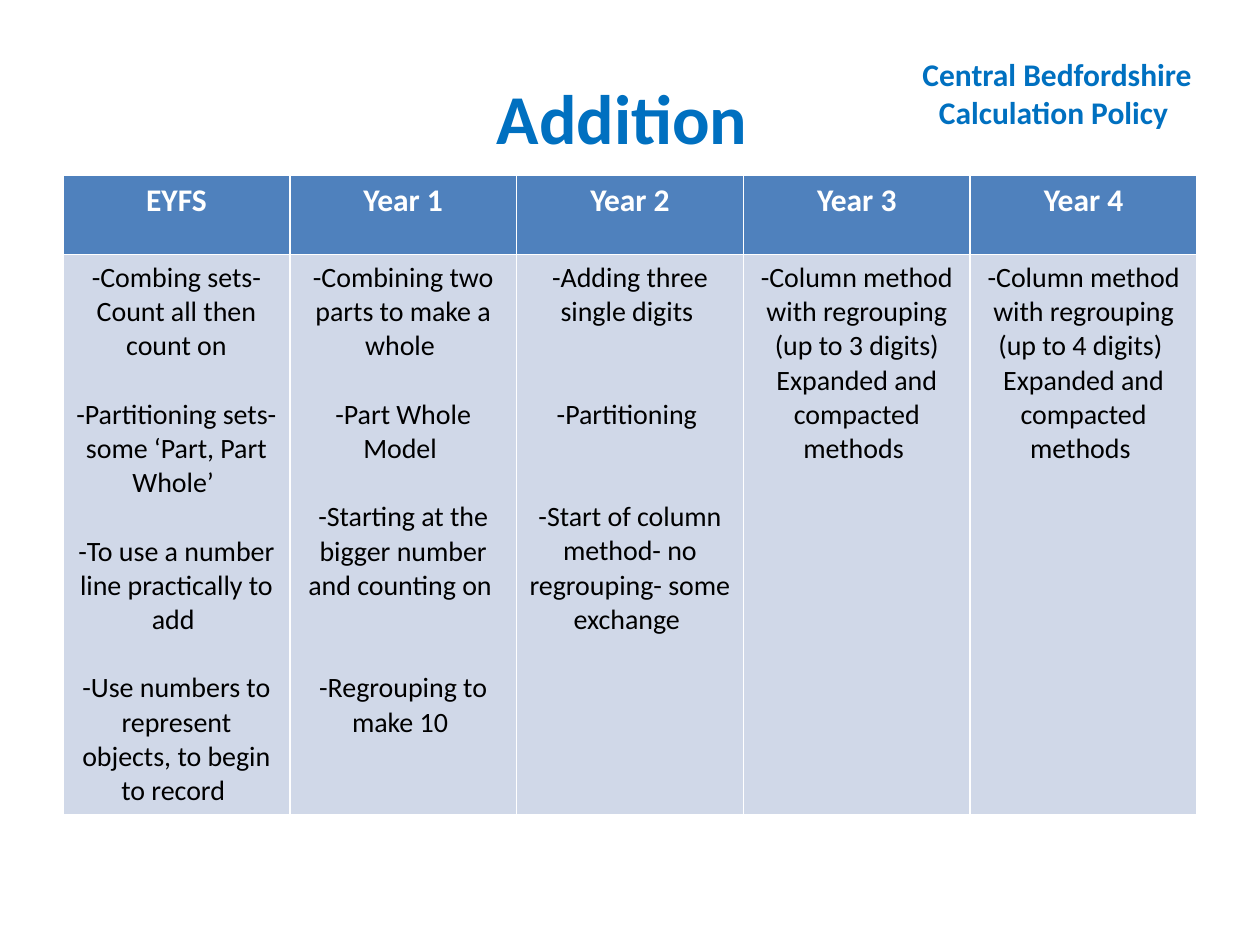
from dataclasses import dataclass

from pptx import Presentation
from pptx.dml.color import RGBColor
from pptx.enum.text import MSO_ANCHOR, PP_ALIGN
from pptx.util import Inches, Pt

WIDTH, HEIGHT = 10, 7.5
MARGIN = 0.05 * WIDTH
LINE_PITCH = 19.5  # points, one line of 16 pt body text
COLORS = {"heading": "0070C0", "header": "4F81BD", "body": "D0D8E8",
          "light": "FFFFFF", "dark": "000000"}


@dataclass
class Step:
    text: str
    gap: int = 0  # empty lines above


@dataclass
class Stage:
    name: str
    steps: list[Step]


STAGES = [
    Stage("EYFS", [
        Step("-Combing sets-Count all then count on"),
        Step("-Partitioning sets-some ‘Part, Part Whole’ ", 1),
        Step("-To use a number line practically to add ", 1),
        Step("-Use numbers to represent objects, to begin to record ", 1)]),
    Stage("Year 1", [
        Step("-Combining two parts to make a whole "),
        Step("-Part Whole Model ", 1),
        Step("-Starting at the bigger number and counting on ", 1),
        Step("-Regrouping to make 10 ", 2)]),
    Stage("Year 2", [
        Step("-Adding three single digits "),
        Step("-Partitioning ", 2),
        Step("-Start of column method- no regrouping- some exchange ", 2)]),
    Stage("Year 3", [
        Step("-Column method with regrouping (up to 3 digits)"),
        Step("Expanded and compacted methods ")]),
    Stage("Year 4", [
        Step("-Column method with regrouping (up to 4 digits) "),
        Step("Expanded and compacted methods ")]),
]


def write(frame, steps: list[Step], size: int, color: str, bold: bool) -> None:
    """Fill a text frame with centred paragraphs."""
    frame.text = "\n".join(step.text for step in steps)
    for para, step in zip(frame.paragraphs, steps):
        para.alignment = PP_ALIGN.CENTER
        if step.gap:
            para.space_before = Pt(step.gap * LINE_PITCH)
        for span in para.runs:
            span.font.name = "Calibri"
            span.font.size = Pt(size)
            span.font.bold = bold
            span.font.color.rgb = RGBColor.from_string(COLORS[color])


def fill_cell(cell, color: str) -> None:
    cell.fill.solid()
    cell.fill.fore_color.rgb = RGBColor.from_string(COLORS[color])


def add_stage_table(page, stages: list[Stage]) -> None:
    """One column per stage: its name above its steps."""
    heights = (0.63, 4.44)
    table = page.shapes.add_table(
        len(heights), len(stages), Inches(MARGIN), Inches(1.39),
        Inches(WIDTH - 2 * MARGIN), Inches(sum(heights))).table
    table.horz_banding = False
    for row, height in zip(table.rows, heights):
        row.height = Inches(height)
    for column, stage in enumerate(stages):
        header, body = table.cell(0, column), table.cell(1, column)
        fill_cell(header, "header")
        write(header.text_frame, [Step(stage.name)], 18, "light", True)
        fill_cell(body, "body")
        write(body.text_frame, stage.steps, 16, "dark", False)


def main() -> None:
    deck = Presentation()
    deck.slide_width, deck.slide_height = Inches(WIDTH), Inches(HEIGHT)
    page = deck.slides.add_slide(deck.slide_layouts[5])

    # Title
    title = page.shapes.title
    title.left, title.top = Inches(MARGIN), Inches(0.04 * HEIGHT)
    title.width, title.height = Inches(WIDTH - 2 * MARGIN), Inches(1.25)
    title.text_frame.vertical_anchor = MSO_ANCHOR.MIDDLE
    write(title.text_frame, [Step("Addition ")], 40, "heading", True)

    # Stages
    add_stage_table(page, STAGES)

    # Policy name
    box = page.shapes.add_textbox(
        Inches(7.05), Inches(0.39), Inches(2.68), Inches(0.71))
    box.text_frame.word_wrap = True
    write(box.text_frame, [Step("Central Bedfordshire Calculation Policy ")],
          18, "heading", True)

    deck.save("out.pptx")


if __name__ == "__main__":
    main()
